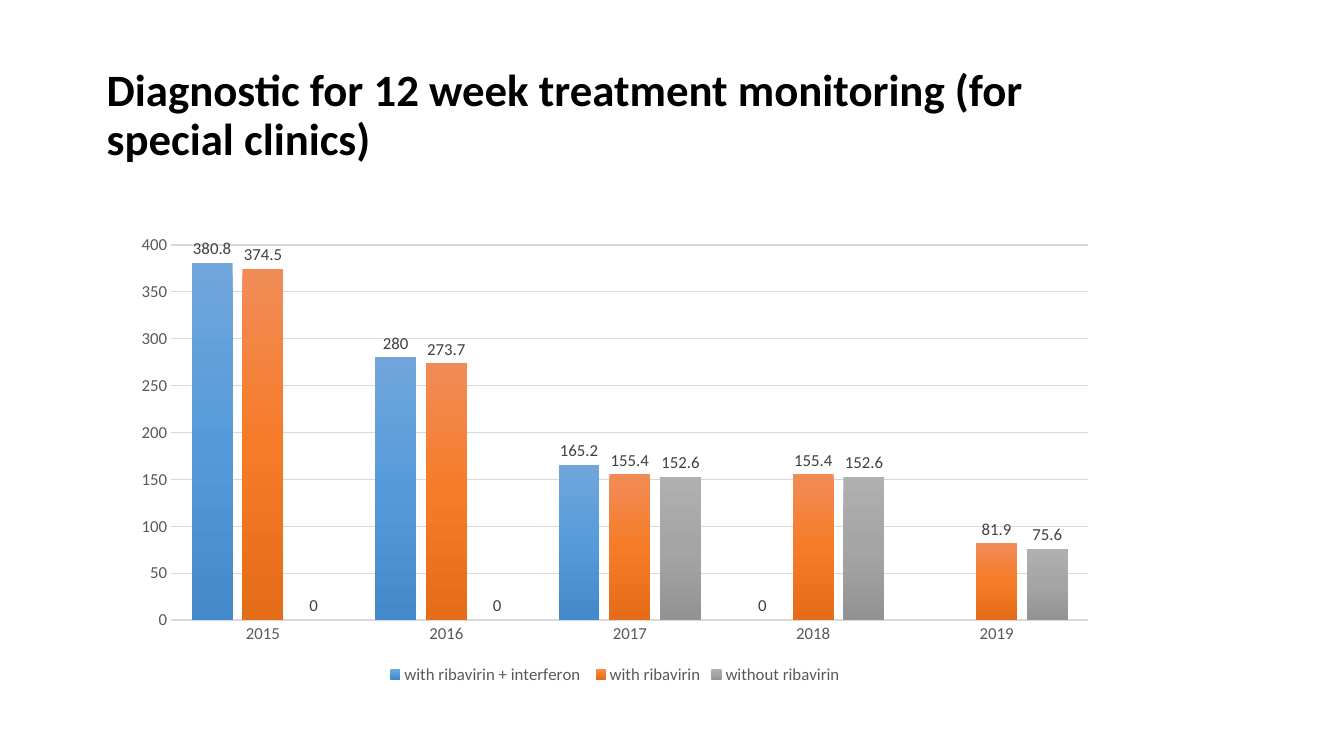
"""Build a slide with a clustered column chart on 12 week treatment monitoring."""
from lxml.etree import SubElement
from pptx import Presentation
from pptx.chart.data import CategoryChartData
from pptx.dml.color import RGBColor
from pptx.enum.chart import XL_CHART_TYPE as CHART, XL_LABEL_POSITION as LABEL
from pptx.enum.chart import XL_LEGEND_POSITION as LEGEND, XL_TICK_MARK as TICK
from pptx.enum.text import MSO_ANCHOR
from pptx.oxml.ns import qn
from pptx.util import Inches, Pt

TITLE = "Diagnostic for 12 week treatment monitoring (for special clinics)"
TITLE_BOX = (0.96, 0.5, 10.29, 1.31)
CHART_BOX = (1.21, 2.24, 9.78, 4.59)
YEARS = ["2015", "2016", "2017", "2018", "2019"]
SERIES = [
    ("with ribavirin + interferon ", (380.8, 280, 165.2, 0, None), ("71A6DB", "559BDB", "448ACA")),
    ("with ribavirin", (374.5, 273.7, 155.4, 155.4, 81.9), ("F18C57", "F67B28", "E56C19")),
    ("without ribavirin", (0, 0, 152.6, 152.6, 75.6), ("AFAFAF", "A5A5A5", "939393")),
]
FONT, GREY, GRID, LABEL_GREY = "Calibri", "595959", "D9D9D9", "404040"


def rgb(color):
    return RGBColor.from_string(color)


def set_font(font, size, color, bold=False):
    font.name, font.size, font.bold = FONT, Pt(size), bold
    font.color.rgb = rgb(color)


def set_line(line, width):
    line.color.rgb = rgb(GRID)
    line.width = Pt(width)


def fill_gradient(series, colors):
    fill = series.format.fill
    fill.gradient()
    fill.gradient_angle = 270
    stops = series.format._element.find(".//" + qn("a:gsLst"))
    stops.clear()
    for i, color in enumerate(colors):
        stop = SubElement(stops, qn("a:gs"), pos=str(i * 50000))
        SubElement(stop, qn("a:srgbClr"), val=color)


def add_title(slide):
    tf = slide.shapes.add_textbox(*map(Inches, TITLE_BOX)).text_frame
    tf.word_wrap = True
    tf.vertical_anchor = MSO_ANCHOR.MIDDLE
    tf.text = TITLE
    p = tf.paragraphs[0]
    p.line_spacing = 0.9
    set_font(p.runs[0].font, 32, "000000", True)


def add_columns(slide):
    data = CategoryChartData()
    data.categories = YEARS
    for name, values, _ in SERIES:
        data.add_series(name, values)
    chart = slide.shapes.add_chart(CHART.COLUMN_CLUSTERED, *map(Inches, CHART_BOX), data).chart
    set_font(chart.font, 10, "000000")
    chart.has_title = False
    chart.has_legend = True
    chart.legend.position = LEGEND.BOTTOM
    chart.legend.include_in_layout = False
    set_font(chart.legend.font, 12, GREY)

    years, amounts = chart.category_axis, chart.value_axis
    for axis in (years, amounts):
        axis.major_tick_mark = axis.minor_tick_mark = TICK.NONE
        set_font(axis.tick_labels.font, 12, GREY)
    set_line(years.format.line, 1)
    amounts.format.line.fill.background()
    set_line(amounts.major_gridlines.format.line, 0.75)
    amounts.minimum_scale, amounts.maximum_scale, amounts.major_unit = 0, 400, 50

    plot = chart.plots[0]
    plot.gap_width, plot.overlap, plot.vary_by_categories = 100, -24, False
    for series, (_, _, colors) in zip(plot.series, SERIES):
        fill_gradient(series, colors)
        labels = series.data_labels
        labels.show_value = True
        labels.position = LABEL.OUTSIDE_END
        set_font(labels.font, 12, LABEL_GREY)


def main():
    prs = Presentation()
    prs.slide_width, prs.slide_height = Inches(13.33), Inches(7.5)
    slide = prs.slides.add_slide(prs.slide_layouts[6])
    add_title(slide)
    add_columns(slide)
    prs.save("out.pptx")


if __name__ == "__main__":
    main()
